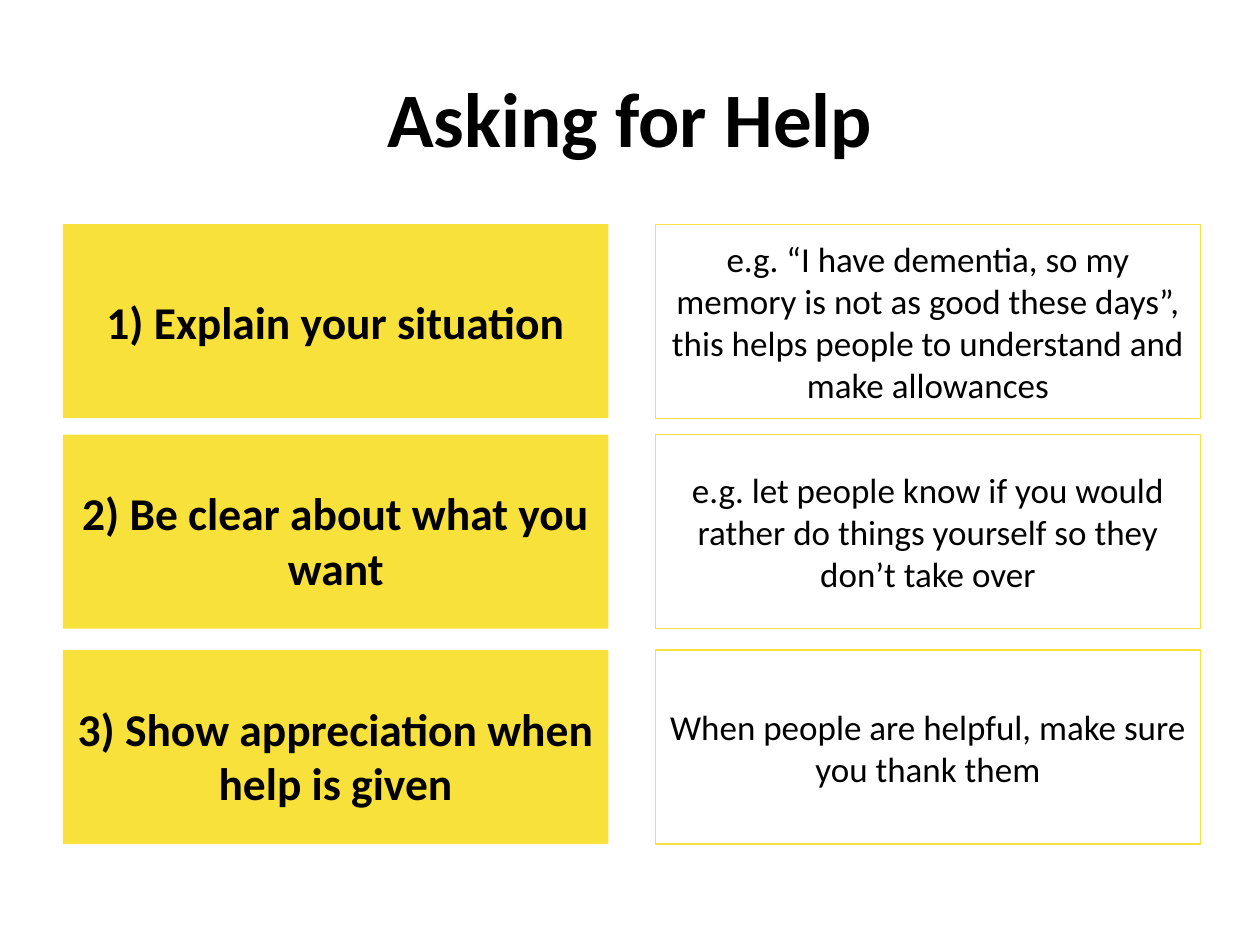
from pptx import Presentation
from pptx.dml.color import RGBColor
from pptx.enum.shapes import MSO_SHAPE as SHAPE
from pptx.enum.text import MSO_ANCHOR as ANCHOR, PP_ALIGN as ALIGN
from pptx.util import Inches, Pt

YELLOW = RGBColor(0xF8, 0xE1, 0x3A)
BLACK = RGBColor(0x00, 0x00, 0x00)

# Grid in inches: left edges of columns, top edges of rows, size of a box
COLUMNS = (0.5, 5.2)
ROWS = (1.78, 3.45, 5.16)
BOX_WIDTH, BOX_HEIGHT = 4.33, 1.54

# Step, example, extra top inset of the step
STEPS = (
    ("1) Explain your situation",
     "e.g. “I have dementia, so my memory is not as good these days”, "
     "this helps people to understand and make allowances", 0),
    ("2) Be clear about what you want",
     "e.g. let people know if you would rather do things yourself "
     "so they don’t take over", 0.13),
    ("3) Show appreciation when help is given",
     "When people are helpful, make sure you thank them", 0.13),
)


class Deck:
    font = "Calibri"

    def __init__(self, prs):
        self.s = prs.slides.add_slide(prs.slide_layouts[5])

    def add_text(self, sp, text, size, bold=False, inset=0):
        tf = sp.text_frame
        tf.word_wrap = True
        tf.vertical_anchor = ANCHOR.MIDDLE
        tf.margin_top = Inches(0.05 + inset)
        p = tf.paragraphs[0]
        p.alignment = ALIGN.CENTER
        r = p.add_run()
        r.text = text
        r.font.name = self.font
        r.font.size = Pt(size)
        r.font.bold = bold
        r.font.color.rgb = BLACK

    def title(self, text):
        sp = self.s.shapes.title
        sp.left, sp.top = Inches(0.5), Inches(0.3)
        sp.width, sp.height = Inches(9), Inches(1.25)
        self.add_text(sp, text, 44, bold=True)

    def box(self, col, row):
        sp = self.s.shapes.add_shape(
            SHAPE.RECTANGLE, Inches(COLUMNS[col]), Inches(ROWS[row]),
            Inches(BOX_WIDTH), Inches(BOX_HEIGHT))
        sp.shadow.inherit = False
        return sp

    def step(self, row, text, inset):
        sp = self.box(0, row)
        sp.fill.solid()
        sp.fill.fore_color.rgb = YELLOW
        sp.line.fill.background()
        self.add_text(sp, text, 26, bold=True, inset=inset)

    def example(self, row, text):
        sp = self.box(1, row)
        sp.fill.background()
        sp.line.color.rgb = YELLOW
        sp.line.width = Pt(0.75)
        self.add_text(sp, text, 20)


def main():
    prs = Presentation()
    prs.slide_width, prs.slide_height = Inches(10), Inches(7.5)
    deck = Deck(prs)
    deck.title("Asking for Help")

    # Steps on the left, examples on the right
    for row, (step, example, inset) in enumerate(STEPS):
        deck.step(row, step, inset)
        deck.example(row, example)

    prs.save("out.pptx")


if __name__ == "__main__":
    main()
